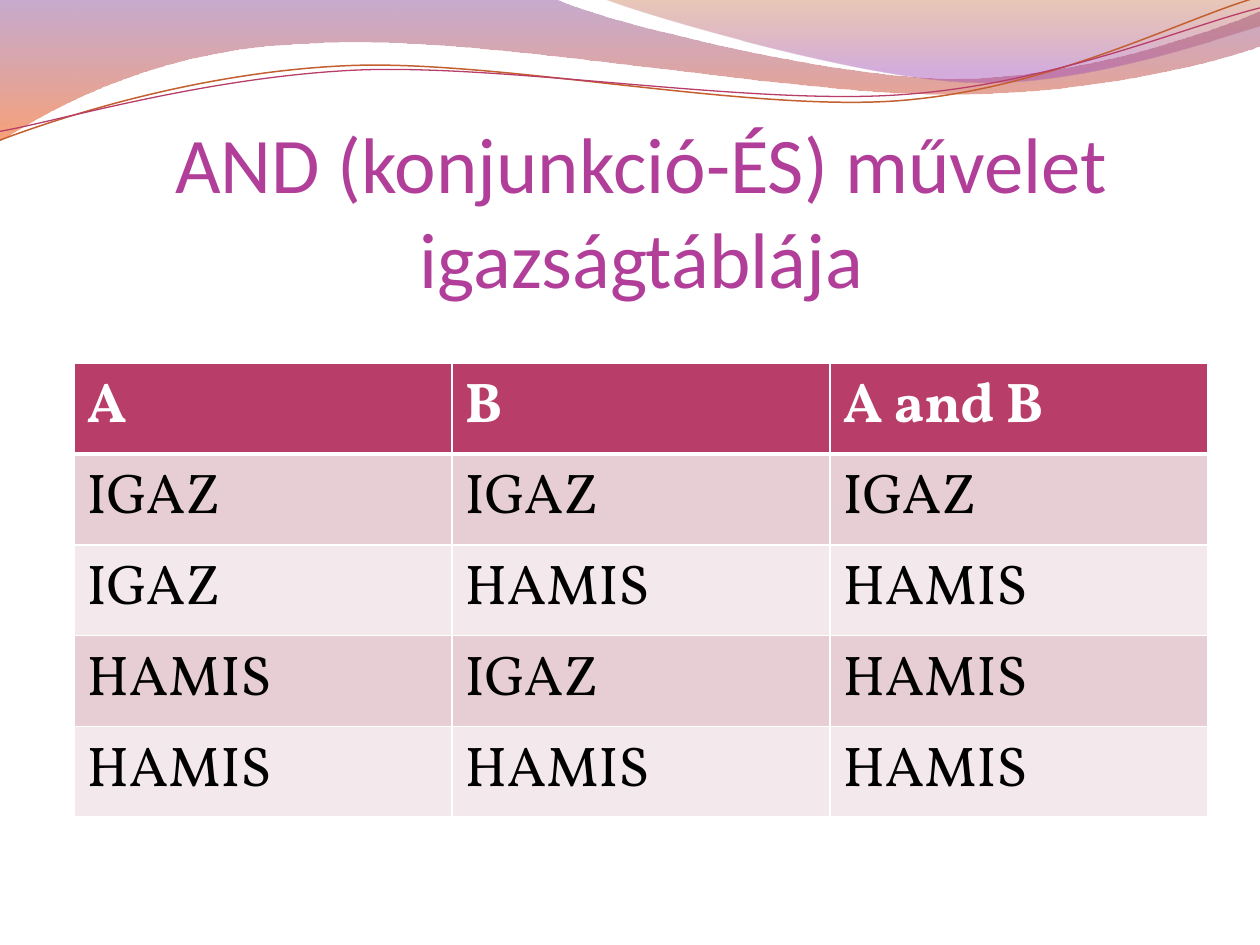
from dataclasses import dataclass

from lxml import etree
from pptx import Presentation
from pptx import util as u
from pptx.dml.color import RGBColor
from pptx.enum import text
from pptx.oxml.ns import qn


@dataclass(frozen=True)
class Theme:
    title_font: str = "Calibri"
    table_font: str = "Vollkorn"
    title_size: float = 45
    table_size: float = 32
    title: str = "B13F9A"
    header: str = "B83D68"
    bands: tuple = ("E6CED4", "F3E8EB")
    header_text: str = "FFFFFF"
    body_text: str = "000000"
    border: str = "FFFFFF"
    # Gradient stops: position, colour, opacity in percent
    left_wave: tuple = ((0, "834591", 45), (1, "F35307", 55))
    right_wave: tuple = ((0, "B74915", 30), (0.8, "A14BB4", 45))
    orange_line: str = "C45F30"
    pink_line: str = "B83D68"


# Outlines in points: a start, then lines (x, y) and cubic curves
# (control 1, control 2, end). The two thin lines are tilted afterwards.
LINE_TILT = 357.3
LEFT_WAVE = [
    (0, 0), (317, -0.7),
    (343, 12, 478, 45, 546, 45), (614, 45, 690, 19, 720, 6.5),
    (720.7, 26),
    (708, 32, 626, 55, 537, 54), (448, 54, 275, 20, 185, 24.5),
    (93, 26, 33, 60, -0.7, 81), (0, 0),
]
RIGHT_WAVE = [
    (345, -0.7),
    (366, 8, 491, 45, 554, 47), (616, 50, 692, 23, 720, 15),
    (720, 0), (345, -0.7),
]
ORANGE_LINE = [
    (-1.4, 63.1),
    (33.7, 51.7, 114.3, 29.4, 199.9, 30), (284.9, 30.5, 425.8, 67.2, 512.5, 64.8),
    (599.2, 62.3, 676.1, 25.9, 720.1, 15.4),
]
PINK_LINE = [
    (-1.1, 58.1),
    (33.2, 53.7, 118.2, 32.6, 204.3, 32.7), (290.4, 33.2, 429.1, 63.8, 515.3, 61.4),
    (601.4, 59.4, 678.4, 30, 721.4, 21.5),
]

TRUTH_TABLE = [
    ("A", "B", "A and B"),
    ("IGAZ", "IGAZ", "IGAZ"),
    ("IGAZ", "HAMIS", "HAMIS"),
    ("HAMIS", "IGAZ", "HAMIS"),
    ("HAMIS", "HAMIS", "HAMIS"),
]


class SlideBuilder:
    """Holds the theme and the slide being filled."""

    def __init__(self, slide, theme):
        self.slide = slide
        self.theme = theme

    def add_run(self, paragraph, content, font, size, color, bold=False):
        run = paragraph.add_run()
        run.text = content
        run.font.name = font
        run.font.size = u.Pt(size)
        run.font.bold = bold
        run.font.color.rgb = RGBColor.from_string(color)

    def outline(self, outline, closed):
        """Build a freeform, then join each three curve points into one cubic curve."""
        vertices = [
            (u.Pt(segment[i]), u.Pt(segment[i + 1]))
            for segment in outline for i in range(0, len(segment), 2)
        ]
        builder = self.slide.shapes.build_freeform(*vertices[0])
        builder.add_line_segments(vertices[1:], close=closed)
        shape = builder.convert_to_shape()
        shape.shadow.inherit = False
        lines = iter(list(shape.element.iter(qn("a:lnTo"))))
        for segment in outline[1:]:
            first = next(lines)
            if len(segment) == 6:
                first.tag = qn("a:cubicBezTo")
                for _ in range(2):
                    line = next(lines)
                    first.append(line[0])
                    line.getparent().remove(line)
        return shape

    def wave(self, outline, stops):
        shape = self.outline(outline, closed=True)
        shape.line.fill.background()
        shape.fill.gradient()
        shape.fill.gradient_angle = 270
        for stop, (position, color, _) in zip(shape.fill.gradient_stops, stops):
            stop.position = position
            stop.color.rgb = RGBColor.from_string(color)
        for element, (_, _, opacity) in zip(shape.element.iter(qn("a:srgbClr")), stops):
            etree.SubElement(element, qn("a:alpha"), val=str(opacity * 1000))

    def curve(self, outline, color, width):
        shape = self.outline(outline, closed=False)
        shape.rotation = LINE_TILT
        shape.fill.background()
        shape.line.color.rgb = RGBColor.from_string(color)
        shape.line.width = u.Pt(width)

    def title(self, content, left, top, width, height):
        shape = self.slide.shapes.title
        shape.left, shape.top = u.Pt(left), u.Pt(top)
        shape.width, shape.height = u.Pt(width), u.Pt(height)
        frame = shape.text_frame
        frame.word_wrap = True
        frame.auto_size = text.MSO_AUTO_SIZE.NONE
        frame.vertical_anchor = text.MSO_ANCHOR.BOTTOM
        frame.margin_left = frame.margin_right = frame.margin_bottom = 0
        frame.margin_top = u.Pt(3.6)
        paragraph = frame.paragraphs[0]
        paragraph.alignment = text.PP_ALIGN.CENTER
        theme = self.theme
        self.add_run(paragraph, content, theme.title_font, theme.title_size, theme.title)

    def cell_borders(self, cell, widths):
        """Set the left, right, top and bottom borders; call before filling."""
        properties = cell._tc.get_or_add_tcPr()
        for side, width in zip("LRTB", widths):
            line = etree.SubElement(properties, qn(f"a:ln{side}"), w=str(u.Pt(width)))
            fill = etree.SubElement(line, qn("a:solidFill"))
            etree.SubElement(fill, qn("a:srgbClr"), val=self.theme.border)

    def table(self, rows, left, top, column_width, row_height):
        theme = self.theme
        columns = len(rows[0])
        table = self.slide.shapes.add_table(
            len(rows), columns, u.Pt(left), u.Pt(top),
            u.Pt(column_width * columns), u.Pt(row_height * len(rows)),
        ).table
        table.horz_banding = False
        for row_index, row in enumerate(rows):
            is_header = row_index == 0
            fill = theme.header if is_header else theme.bands[(row_index - 1) % 2]
            color = theme.header_text if is_header else theme.body_text
            borders = (1, 1, 3 if row_index == 1 else 1, 3 if is_header else 1)
            for column_index, content in enumerate(row):
                cell = table.cell(row_index, column_index)
                self.cell_borders(cell, borders)
                cell.fill.solid()
                cell.fill.fore_color.rgb = RGBColor.from_string(fill)
                self.add_run(cell.text_frame.paragraphs[0], content,
                             theme.table_font, theme.table_size, color, is_header)


def main():
    presentation = Presentation()
    presentation.slide_width, presentation.slide_height = u.Pt(720), u.Pt(540)
    theme = Theme()
    slide = presentation.slides.add_slide(presentation.slide_layouts[5])
    builder = SlideBuilder(slide, theme)
    builder.wave(LEFT_WAVE, theme.left_wave)
    builder.wave(RIGHT_WAVE, theme.right_wave)
    builder.curve(ORANGE_LINE, theme.orange_line, 0.85)
    builder.curve(PINK_LINE, theme.pink_line, 0.75)
    builder.title("AND (konjunkció-ÉS) művelet igazságtáblája", 42.5, 94.5, 648, 79.4)
    builder.table(TRUTH_TABLE, 42.4, 207.6, column_width=216, row_height=44)
    presentation.save("out.pptx")


if __name__ == "__main__":
    main()
